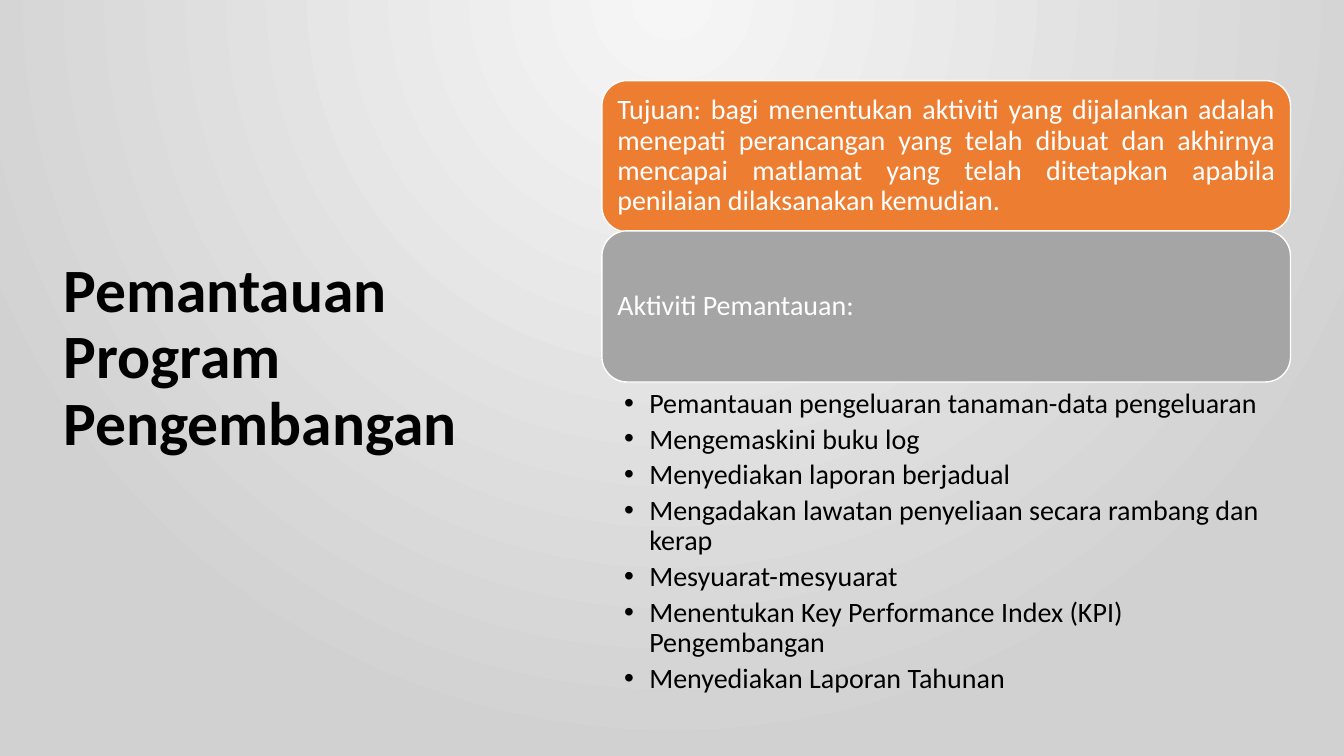
from dataclasses import dataclass

from lxml import etree
from pptx import Presentation
from pptx.dml.color import RGBColor
from pptx.enum import shapes, text
from pptx.oxml.ns import qn
from pptx.util import Inches, Pt


@dataclass(frozen=True)
class Theme:
    font: str = "Calibri"
    title_size: int = 44
    body_size: int = 20
    ink: str = "000000"
    paper: str = "FFFFFF"
    orange: str = "ED7D31"
    grey: str = "A5A5A5"
    glow: tuple = ("F6F6F6", "D2D1D1")


PURPOSE = (
    "Tujuan: bagi menentukan aktiviti yang dijalankan adalah menepati "
    "perancangan yang telah dibuat dan akhirnya mencapai matlamat yang telah "
    "ditetapkan apabila penilaian dilaksanakan kemudian."
)
ACTIVITIES = [
    "Pemantauan pengeluaran tanaman-data pengeluaran",
    "Mengemaskini buku log",
    "Menyediakan laporan berjadual",
    "Mengadakan lawatan penyeliaan secara rambang dan kerap",
    "Mesyuarat-mesyuarat",
    "Menentukan Key Performance Index (KPI) Pengembangan",
    "Menyediakan Laporan Tahunan",
]
PANEL_LEFT, PANEL_WIDTH = 5.97, 6.83
CARD_TOP, CARD_HEIGHT, CARD_STEP = 0.8, 1.5, 1.49


class SlideBuilder:
    def __init__(self, slide, theme):
        self.slide = slide
        self.theme = theme

    def background(self):
        """Fill the slide with a glow spreading from the top centre."""
        fill = self.slide.background.fill
        fill.gradient()
        for stop, color, position in zip(fill.gradient_stops, self.theme.glow, (0, 1)):
            stop.color.rgb = RGBColor.from_string(color)
            stop.position = position
        gradient = self.slide.element.find(".//" + qn("a:gradFill"))
        gradient.remove(gradient.find(qn("a:lin")))
        circle = etree.SubElement(gradient, qn("a:path"), {"path": "circle"})
        etree.SubElement(circle, qn("a:fillToRect"),
                         l="43000", t="0", r="43000", b="100000")

    def frame(self, shape, insets, anchor=text.MSO_ANCHOR.TOP):
        """Prepare a shape's text frame; insets run left, top, right, bottom."""
        frame = shape.text_frame
        frame.word_wrap = True
        frame.vertical_anchor = anchor
        (frame.margin_left, frame.margin_top,
         frame.margin_right, frame.margin_bottom) = map(Inches, insets)
        return frame

    def add_words(self, para, words, size, color, bold=False, align=text.PP_ALIGN.LEFT):
        para.alignment = align
        para.line_spacing = 0.9
        span = para.add_run()
        span.text = words
        span.font.name = self.theme.font
        span.font.size = Pt(size)
        span.font.bold = bold
        span.font.color.rgb = RGBColor.from_string(color)

    def title(self, words, place):
        box = self.slide.shapes.add_textbox(*map(Inches, place))
        frame = self.frame(box, (0.1, 0.05, 0.1, 0.05))
        self.add_words(frame.paragraphs[0], words, self.theme.title_size,
                       self.theme.ink, bold=True)

    def card(self, words, place, color, align):
        card = self.slide.shapes.add_shape(
            shapes.MSO_SHAPE.ROUNDED_RECTANGLE, *map(Inches, place))
        card.shadow.inherit = False
        card.fill.solid()
        card.fill.fore_color.rgb = RGBColor.from_string(color)
        card.line.color.rgb = RGBColor.from_string(self.theme.paper)
        card.line.width = Pt(1)
        frame = self.frame(card, (0.08,) * 4, text.MSO_ANCHOR.MIDDLE)
        self.add_words(frame.paragraphs[0], words, self.theme.body_size,
                       self.theme.paper, align=align)

    def bullets(self, items, place):
        box = self.slide.shapes.add_textbox(*map(Inches, place))
        frame = self.frame(box, (0.22, 0.03, 0.16, 0.03))
        for index, item in enumerate(items):
            para = frame.add_paragraph() if index else frame.paragraphs[0]
            self.add_words(para, item, self.theme.body_size, self.theme.ink)
            para.space_after = Pt(0.2 * self.theme.body_size)
            props = para._p.get_or_add_pPr()
            props.set("marL", str(Inches(0.25)))
            props.set("indent", str(-Inches(0.25)))
            etree.SubElement(props, qn("a:buFont"), typeface="Arial")
            etree.SubElement(props, qn("a:buChar"), char="•")


def main():
    deck = Presentation()
    deck.slide_width, deck.slide_height = Inches(13.33), Inches(7.5)
    theme = Theme()
    page = SlideBuilder(deck.slides.add_slide(deck.slide_layouts[6]), theme)

    page.background()
    page.title("Pemantauan Program Pengembangan", (0.53, 2.52, 4.64, 2.92))
    cards = [
        (PURPOSE, theme.orange, text.PP_ALIGN.JUSTIFY),
        ("Aktiviti Pemantauan:", theme.grey, text.PP_ALIGN.LEFT),
    ]
    for row, (words, color, align) in enumerate(cards):
        place = (PANEL_LEFT, CARD_TOP + row * CARD_STEP, PANEL_WIDTH, CARD_HEIGHT)
        page.card(words, place, color, align)
    page.bullets(ACTIVITIES, (PANEL_LEFT, 3.83, PANEL_WIDTH, 3.14))
    deck.save("out.pptx")


if __name__ == "__main__":
    main()
